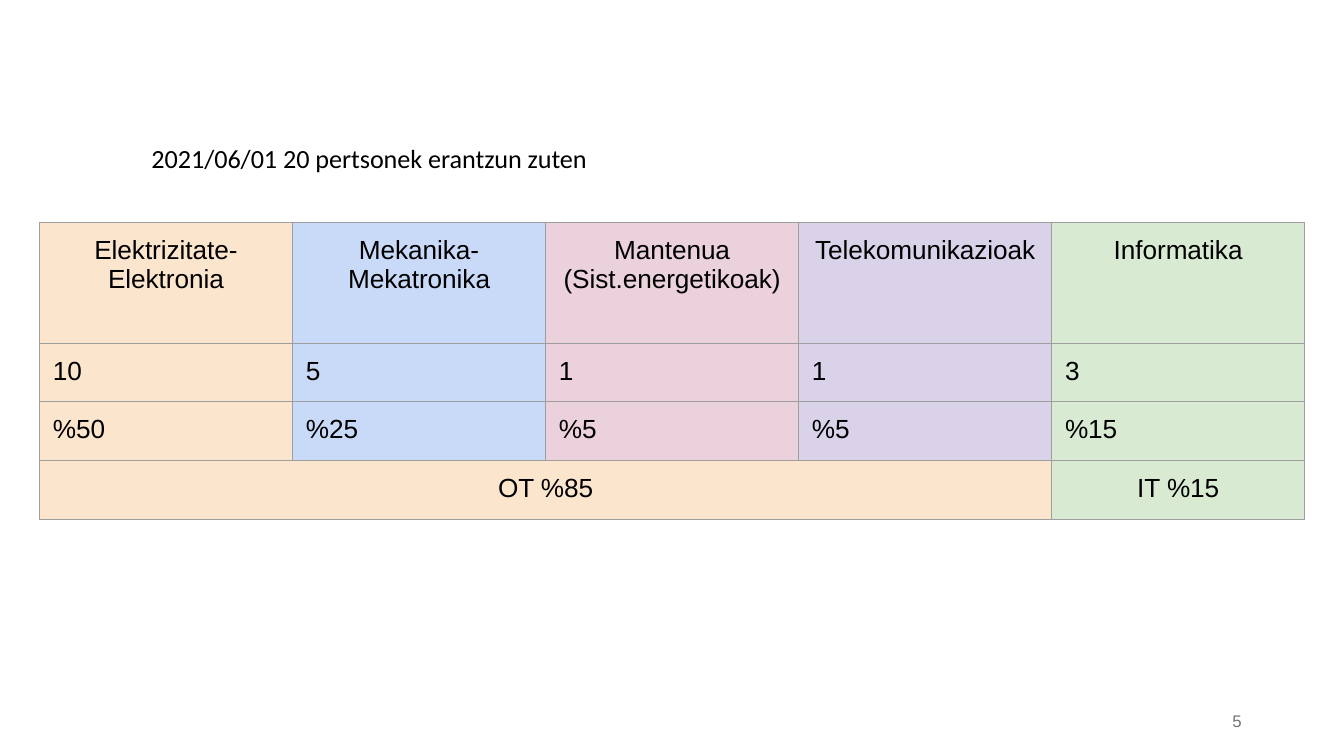
"""Build the survey slide: answers by field, grouped into OT and IT."""
from dataclasses import dataclass

from lxml.etree import SubElement
from pptx import Presentation
from pptx.dml.color import RGBColor
from pptx.enum.text import MSO_ANCHOR as Anchor, PP_ALIGN as Align
from pptx.oxml.ns import qn
from pptx.util import Pt


@dataclass(frozen=True)
class Theme:
    black: str = "000000"
    grey: str = "757575"
    border: str = "9E9E9E"
    fields: tuple = ("FCE5CD", "C9DAF8", "EAD1DC", "D9D2E9", "D9EAD3")
    body_font: str = "Arial"
    intro_font: str = "Calibri"
    body_size: float = 18.67
    number_size: float = 12


theme = Theme()
INSET = 9.6
BORDER_WIDTH = 0.75


def write(frame, text, font, size, color, align):
    frame.text = text
    for para in frame.paragraphs:
        para.alignment = align
        for span in para.runs:
            span.font.name = font
            span.font.size = Pt(size)
            span.font.color.rgb = RGBColor.from_string(color)


def add_borders(cell):
    properties = cell._tc.get_or_add_tcPr()
    for side in ("a:lnL", "a:lnR", "a:lnT", "a:lnB"):
        line = SubElement(properties, qn(side), w=str(Pt(BORDER_WIDTH)))
        fill = SubElement(line, qn("a:solidFill"))
        SubElement(fill, qn("a:srgbClr"), val=theme.border)


deck = Presentation()
deck.slide_width, deck.slide_height = Pt(960), Pt(540)
page = deck.slides.add_slide(deck.slide_layouts[6])

number = page.shapes.add_textbox(Pt(678), Pt(500.5), Pt(216), Pt(28.75))
number.text_frame.word_wrap = True
number.text_frame.vertical_anchor = Anchor.MIDDLE
write(number.text_frame, "5", theme.body_font, theme.number_size, theme.grey, Align.RIGHT)

rows = [
    ["Elektrizitate-\nElektronia", "Mekanika- Mekatronika",
     "Mantenua\n(Sist.energetikoak)", "Telekomunikazioak", "Informatika"],
    ["10", "5", "1", "1", "3"],
    ["%50", "%25", "%5", "%5", "%15"],
    ["OT %85", "", "", "", "IT %15"],
]
row_heights = [86.4, 41.9, 41.9, 41.9]
column_width = 180.75
row_aligns = [Align.CENTER, Align.LEFT, Align.LEFT, Align.CENTER]

table = page.shapes.add_table(
    len(rows), len(theme.fields), Pt(28.2), Pt(158.7),
    Pt(column_width * len(theme.fields)), Pt(sum(row_heights))).table
table.first_row = False
table.horz_banding = False
for column in table.columns:
    column.width = Pt(column_width)

for row_index, (texts, height, align) in enumerate(zip(rows, row_heights, row_aligns)):
    table.rows[row_index].height = Pt(height)
    for column_index, (text, color) in enumerate(zip(texts, theme.fields)):
        cell = table.cell(row_index, column_index)
        cell.margin_left = cell.margin_right = Pt(INSET)
        cell.margin_top = cell.margin_bottom = Pt(INSET)
        add_borders(cell)
        cell.fill.solid()
        cell.fill.fore_color.rgb = RGBColor.from_string(color)
        write(cell.text_frame, text, theme.body_font, theme.body_size, theme.black, align)

table.cell(3, 0).merge(table.cell(3, 3))

intro = page.shapes.add_textbox(Pt(98.6), Pt(92.2), Pt(589), Pt(42.5))
frame = intro.text_frame
frame.word_wrap = True
frame.margin_left = frame.margin_right = Pt(INSET)
frame.margin_top = frame.margin_bottom = Pt(INSET)
write(frame, "2021/06/01 20 pertsonek erantzun zuten", theme.intro_font,
      theme.body_size, theme.black, Align.LEFT)

deck.save("out.pptx")
